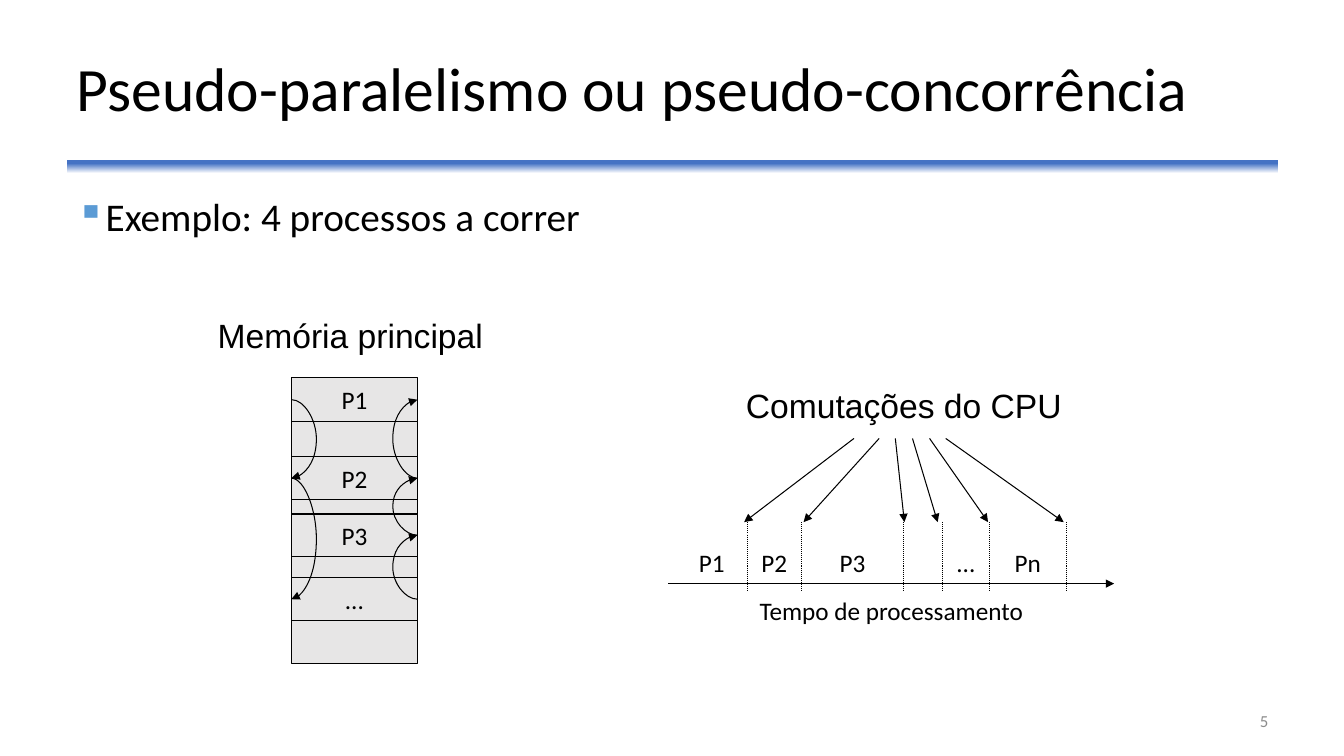
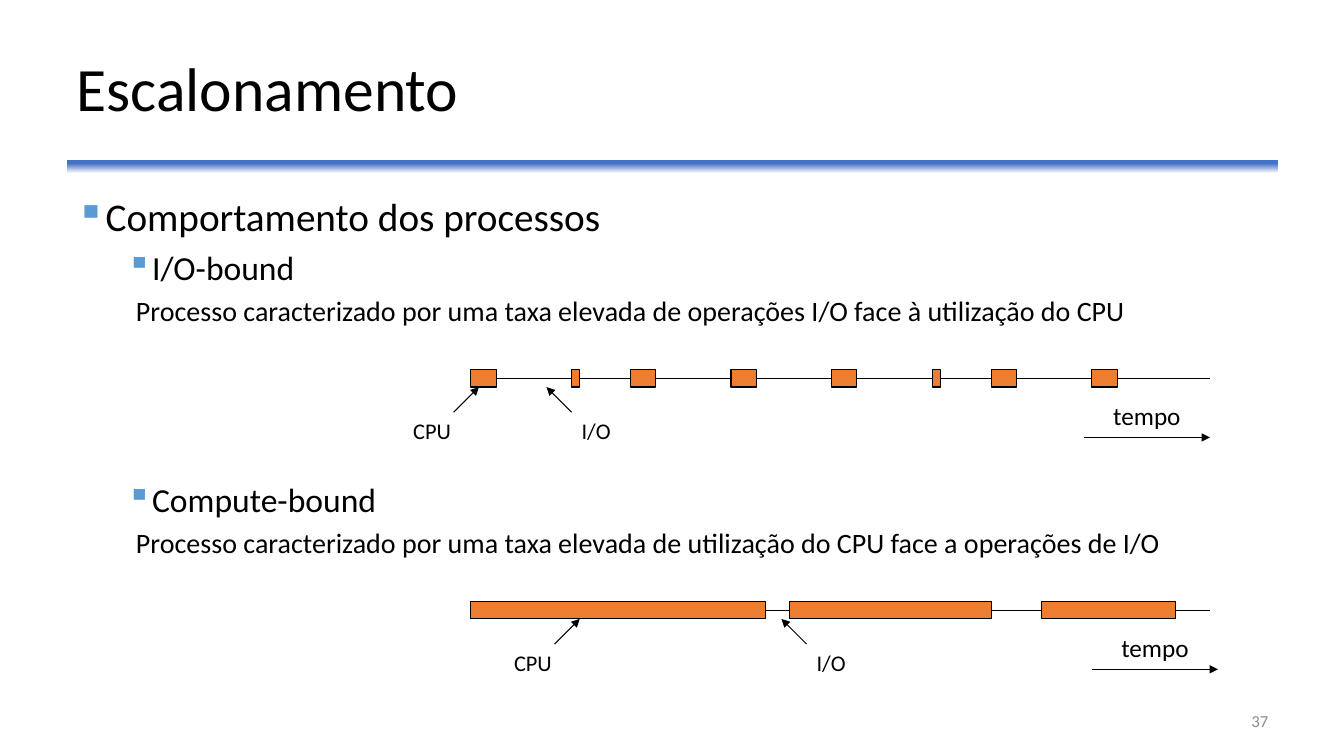
"""Build two slides about process concurrency and scheduling."""
from itertools import pairwise

from lxml.etree import SubElement
from pptx import Presentation
from pptx.dml.color import RGBColor
from pptx.enum.dml import MSO_LINE
from pptx.enum.shapes import MSO_CONNECTOR, MSO_SHAPE
from pptx.enum.text import MSO_ANCHOR, MSO_AUTO_SIZE, PP_ALIGN
from pptx.oxml.ns import qn
from pptx.util import Inches, Pt

THEME = {
    "colors": {
        "ink": RGBColor.from_string("000000"),
        "muted": RGBColor.from_string("8C8C8C"),
        "band": RGBColor.from_string("4472C4"),
        "paper": RGBColor.from_string("FFFFFF"),
        "bullet": "5B9BD5",
        "memory": RGBColor.from_string("E7E6E6"),
        "cpu": RGBColor.from_string("ED7D31"),
    },
    "line": Pt(0.75),
    "styles": {
        "title": {"size": 44, "para": {"alignment": PP_ALIGN.LEFT, "line_spacing": 0.9}},
        "topic": {"size": 28, "indent": (0.29, -0.29), "bullet": "▪"},
        "subtopic": {"size": 24, "indent": (0.75, -0.25), "bullet": "▪",
                     "para": {"space_before": Pt(5)}},
        "late_subtopic": {"size": 24, "indent": (0.75, -0.25), "bullet": "▪",
                          "para": {"space_before": Pt(108)}},
        "detail": {"size": 20, "indent": (0.59, 0), "para": {"space_before": Pt(5)}},
        "heading": {"size": 24, "font": "Arial"},
        "label": {"size": 18, "para": {"alignment": PP_ALIGN.CENTER}},
        "note": {"size": 16},
        "number": {"size": 12, "color": "muted", "para": {"alignment": PP_ALIGN.RIGHT}},
    },
}
COLORS = THEME["colors"]


def place(shape, box, *entries, fill=None, anchor=MSO_ANCHOR.TOP):
    for name, value in zip(("left", "top", "width", "height"), box):
        setattr(shape, name, Inches(value))
    if fill:
        shape.shadow.inherit = False
        shape.fill.solid()
        shape.fill.fore_color.rgb = COLORS[fill]
        shape.line.color.rgb = COLORS["ink"]
        shape.line.width = THEME["line"]
    frame = shape.text_frame
    frame.word_wrap = fill is None
    frame.auto_size = MSO_AUTO_SIZE.NONE
    frame.vertical_anchor = anchor
    for index, (text, style_name) in enumerate(entries):
        style = THEME["styles"][style_name]
        para = frame.add_paragraph() if index else frame.paragraphs[0]
        for name, value in style.get("para", {}).items():
            setattr(para, name, value)
        span = para.add_run()
        span.text = text
        font_format = {"name": style.get("font", "Calibri"), "size": Pt(style["size"])}
        for name, value in font_format.items():
            setattr(span.font, name, value)
        span.font.color.rgb = COLORS[style.get("color", "ink")]
        if "indent" in style:
            properties = para._p.get_or_add_pPr()
            for name, value in zip(("marL", "indent"), style["indent"]):
                properties.set(name, str(Inches(value)))
            if "bullet" in style:
                color = SubElement(properties, qn("a:buClr"))
                SubElement(color, qn("a:srgbClr"), val=COLORS["bullet"])
                SubElement(properties, qn("a:buChar"), char=style["bullet"])
    return shape


def add_line(page, start, end, arrow=False, kind=MSO_CONNECTOR.STRAIGHT):
    line = page.shapes.add_connector(kind, *(Inches(value) for value in (*start, *end)))
    line.line.color.rgb = COLORS["ink"]
    line.line.width = THEME["line"]
    if arrow:
        SubElement(line.line._get_or_add_ln(), qn("a:tailEnd"), type="triangle")
    SubElement(line.element.spPr, qn("a:effectLst"))
    return line


deck = Presentation()
deck.slide_width, deck.slide_height = Inches(13.33), Inches(7.5)
layout = deck.slide_layouts.get_by_name("Title Only")

contents = [
    ("Pseudo-paralelismo ou pseudo-concorrência", "5",
     [("Exemplo: 4 processos a correr", "topic")]),
    ("Escalonamento", "37", [
        ("Comportamento dos processos", "topic"),
        ("I/O-bound", "subtopic"),
        ("Processo caracterizado por uma taxa elevada de operações I/O face à utilização do CPU",
         "detail"),
        ("Compute-bound", "late_subtopic"),
        ("Processo caracterizado por uma taxa elevada de utilização do CPU face a operações de I/O",
         "detail"),
    ]),
]
pages = []
for title, number, body in contents:
    page = deck.slides.add_slide(layout)
    place(page.shapes.title, (0.66, 0.25, 12.02, 1.32), (title, "title"),
          anchor=MSO_ANCHOR.MIDDLE)
    place(page.shapes.add_textbox(0, 0, 0, 0), (0.66, 1.86, 12.02, 4.9), *body)
    place(page.shapes.add_textbox(0, 0, 0, 0), (9.42, 6.95, 3.26, 0.4), (number, "number"),
          anchor=MSO_ANCHOR.MIDDLE)
    pages.append(page)
concurrency, scheduling = pages

band = place(concurrency.shapes.add_shape(MSO_SHAPE.RECTANGLE, 0, 0, 0, 0),
             (0.66, 1.59, 12.02, 0.13), fill="band")
band.line.fill.background()
band.fill.gradient()
band.fill.gradient_angle = 270
for stop, position, color in zip(band.fill.gradient_stops, (0.25, 1), ("band", "paper")):
    stop.position = position
    stop.color.rgb = COLORS[color]
layout.shapes.element.append(band.element)

processes = []
top = 3.75
for label, height in [("P1", 0.43), ("", 0.35), ("P2", 0.43), ("", 0.14),
                      ("P3", 0.42), ("", 0.21), ("...", 0.43), ("", 0.42)]:
    block = place(concurrency.shapes.add_shape(MSO_SHAPE.RECTANGLE, 0, 0, 0, 0),
                  (2.89, top, 1.25, height), *([(label, "label")] if label else []),
                  fill="memory", anchor=MSO_ANCHOR.MIDDLE)
    if label:
        processes.append(block)
    top += height

bulge, span_width = 0.25, 0.002
for source, target, side in [(0, 1, 1), (1, 3, 1), (3, 2, 3), (2, 1, 3), (1, 0, 3)]:
    switch = add_line(concurrency, (0, 0), (0, 0), arrow=True, kind=MSO_CONNECTOR.CURVE)
    switch.begin_connect(processes[source], side)
    switch.end_connect(processes[target], side)
    switch.width = Inches(span_width)
    bend = round(bulge / span_width * 100000) * (-1 if side == 1 else 1)
    SubElement(switch.element.xpath(".//a:avLst")[0], qn("a:gd"), name="adj1", fmla=f"val {bend}")

add_line(concurrency, (6.63, 5.79), (11.05, 5.79), arrow=True)
bounds = [6.71, 7.41, 7.95, 8.96, 9.35, 9.81, 10.58]
arrow_starts = [8.47, 8.72, 8.88, 9.05, 9.22, 9.38]
arrow_tips = [7.38, 7.97, 8.97, 9.3, 9.8, 10.55]
slots = zip(pairwise(bounds), ["P1", "P2", "P3", "", "...", "Pn"], arrow_starts, arrow_tips)
for (left, right), label, arrow_start, arrow_tip in slots:
    divider = add_line(concurrency, (right, 5.18), (right, 5.86))
    divider.line.dash_style = MSO_LINE.ROUND_DOT
    add_line(concurrency, (arrow_start, 4.35), (arrow_tip, 5.18), arrow=True)
    if label:
        place(concurrency.shapes.add_textbox(0, 0, 0, 0),
              (left, 5.38, right - left, 0.4), (label, "label"))

for box, text, style in [
    ((6.63, 5.86, 4.42, 0.4), "Tempo de processamento", "label"),
    ((2.06, 3.08, 3.08, 0.5), "Memória principal", "heading"),
    ((7.3, 3.77, 3.83, 0.5), "Comutações do CPU", "heading"),
]:
    place(concurrency.shapes.add_textbox(0, 0, 0, 0), box, (text, style))

timelines = [
    {"middle": 3.75, "time": 10.75,
     "bursts": [(4.67, 0.25), (5.67, 0.08), (6.25, 0.25), (7.25, 0.25),
                (8.25, 0.25), (9.25, 0.08), (9.83, 0.25), (10.83, 0.25)],
     "notes": [("CPU", 4, 4.5, 4.75), ("I/O", 5.67, 5.67, 5.42)]},
    {"middle": 6.05, "time": 10.83,
     "bursts": [(4.67, 2.92), (7.83, 2), (10.33, 1.33)],
     "notes": [("CPU", 5, 5.5, 5.75), ("I/O", 8, 8, 7.75)]},
]
for timeline in timelines:
    middle, time_left = timeline["middle"], timeline["time"]
    bars = [place(scheduling.shapes.add_shape(MSO_SHAPE.RECTANGLE, 0, 0, 0, 0),
                  (left, middle - 0.08, width, 0.17), fill="cpu")
            for left, width in timeline["bursts"]]
    for bar, following in zip(bars, bars[1:] + [None]):
        wait = add_line(scheduling, (12, middle), (12, middle))
        wait.begin_connect(bar, 3)
        if following:
            wait.end_connect(following, 1)
        else:
            wait.end_y = wait.begin_y
    for text, left, arrow_start, arrow_tip in timeline["notes"]:
        add_line(scheduling, (arrow_start, middle + 0.34), (arrow_tip, middle + 0.09), arrow=True)
        place(scheduling.shapes.add_textbox(0, 0, 0, 0),
              (left, middle + 0.34, 0.92, 0.37), (text, "note"))
    add_line(scheduling, (time_left, middle + 0.59), (time_left + 1.25, middle + 0.59), arrow=True)
    place(scheduling.shapes.add_textbox(0, 0, 0, 0),
          (time_left, middle + 0.17, 1.25, 0.4), ("tempo", "label"))

deck.save("out.pptx")
